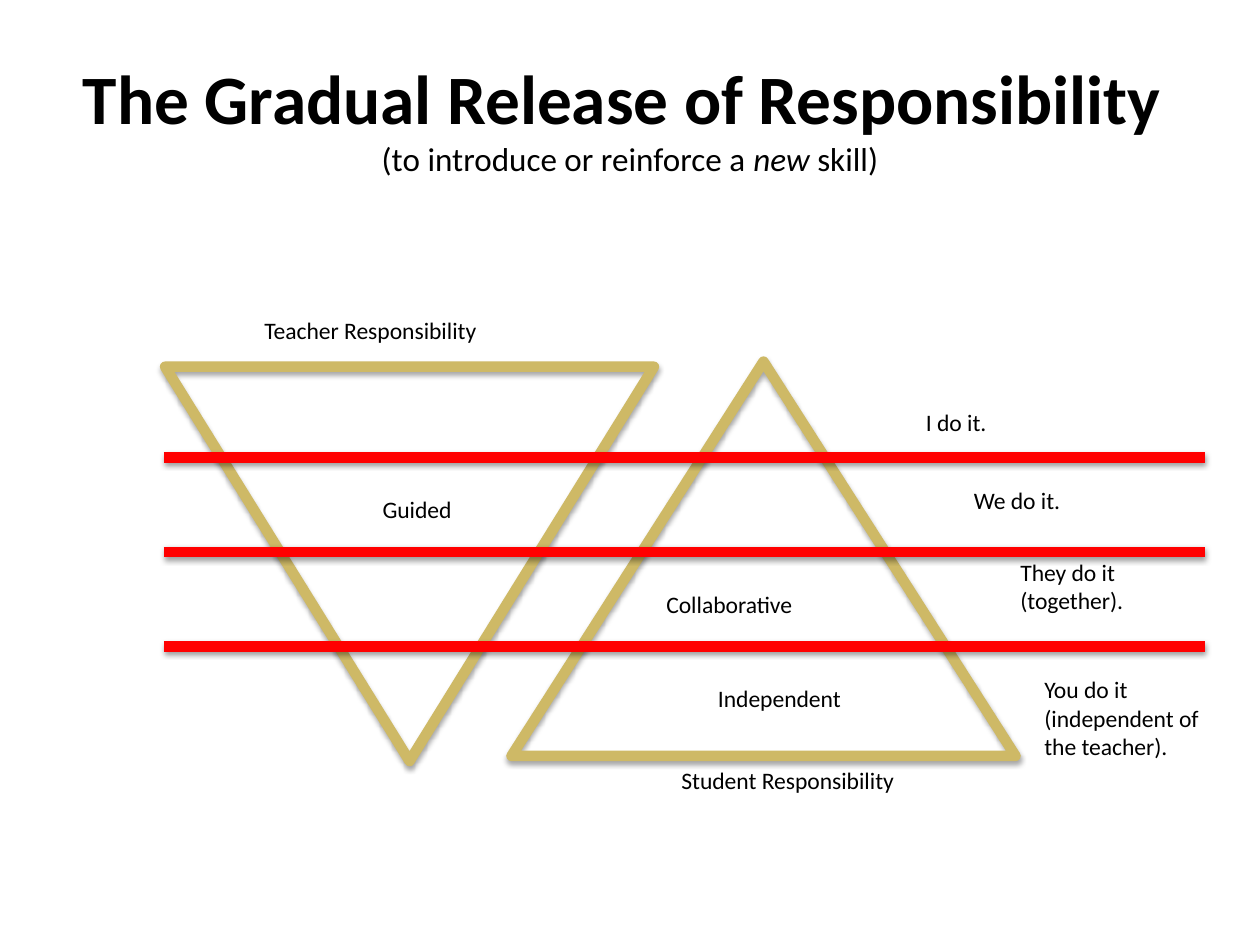
from lxml.etree import SubElement
from pptx import Presentation
from pptx.dml.color import RGBColor
from pptx.enum.shapes import MSO_CONNECTOR, MSO_SHAPE
from pptx.enum.text import MSO_ANCHOR, MSO_AUTO_SIZE, PP_ALIGN
from pptx.oxml.ns import qn
from pptx.util import Inches, Pt

# Content
HEAD = "The Gradual Release of Responsibility "
SUB = [("(to introduce or reinforce a ", False), ("new", True), (" skill)", False)]
# text, left, top, width, height, centred
LABELS = [
    ("Teacher Responsibility", 2, 2.46, 3.63, 0.33, False),
    ("Student Responsibility", 5.31, 6.03, 3.5, 0.33, False),
    ("I do it.", 7.25, 3.19, 1.88, 0.33, False),
    ("We do it.", 7.63, 3.81, 1.81, 0.33, False),
    ("They do it (together).", 8, 4.38, 1.63, 0.56, False),
    ("You do it (independent of the teacher).", 8.19, 5.31, 1.5, 0.78, False),
    ("Guided", 2.37, 3.88, 1.88, 0.33, True),
    ("Collaborative", 5.19, 4.63, 2.13, 0.33, False),
    ("Independent", 4.81, 5.38, 2.75, 0.33, True),
]
# left, top, width, height, rotation
CONES = [(1.31, 2.91, 3.88, 3.13, 180), (4.06, 2.87, 4, 3.13, 0)]
LEFT, RIGHT, FIRST, STEP, COUNT = 1.3, 9.56, 3.63, 0.75, 3
GOLD, RED, BLACK = "CEB966", "FF0000", "000000"


def color(code):
    return RGBColor.from_string(code)


def write(para, text, size=13.5, bold=False, italic=False, ink=BLACK):
    run = para.add_run()
    run.text = text
    font = run.font
    font.name, font.size = "Calibri", Pt(size)
    font.bold, font.italic = bold, italic
    font.color.rgb = color(ink)


def stroke(shape, ink, alpha, dist):
    """Thick outline with a soft shadow falling straight down."""
    shape.line.color.rgb = color(ink)
    shape.line.width = Pt(6)
    fx = SubElement(shape._element.spPr, qn("a:effectLst"))
    cast = SubElement(fx, qn("a:outerShdw"), blurRad=str(Pt(3.1)),
                      dist=str(Pt(dist)), dir="5400000", rotWithShape="0")
    tint = SubElement(cast, qn("a:srgbClr"), val=BLACK)
    SubElement(tint, qn("a:alpha"), val=str(alpha * 1000))


deck = Presentation()
deck.slide_width, deck.slide_height = Inches(10), Inches(7.5)
slide = deck.slides.add_slide(deck.slide_layouts[5])
shapes = slide.shapes

# Title
title = shapes.title
title.left, title.top = Inches(0.5), Inches(0.3)
title.width, title.height = Inches(9), Inches(1.25)
frame = title.text_frame
frame.auto_size = MSO_AUTO_SIZE.NONE
frame.vertical_anchor = MSO_ANCHOR.MIDDLE
para = frame.paragraphs[0]
para.alignment = PP_ALIGN.CENTER
write(para, HEAD, size=39.6, bold=True)
para.add_line_break()
for text, slant in SUB:
    write(para, text, size=18.9, italic=slant)

# Triangles
for *box, turn in CONES:
    cone = shapes.add_shape(MSO_SHAPE.ISOSCELES_TRIANGLE, *map(Inches, box))
    cone.rotation = turn
    cone.fill.background()
    stroke(cone, GOLD, alpha=35, dist=1.8)

# Dividing lines
for row in range(COUNT):
    y = Inches(FIRST + row * STEP)
    rule = shapes.add_connector(MSO_CONNECTOR.STRAIGHT, Inches(LEFT), y, Inches(RIGHT), y)
    stroke(rule, RED, alpha=38, dist=1.6)

# Labels
for text, *box, mid in LABELS:
    frame = shapes.add_textbox(*map(Inches, box)).text_frame
    frame.word_wrap = True
    frame.auto_size = MSO_AUTO_SIZE.SHAPE_TO_FIT_TEXT
    para = frame.paragraphs[0]
    para.alignment = PP_ALIGN.CENTER if mid else PP_ALIGN.LEFT
    write(para, text)

deck.save("out.pptx")
